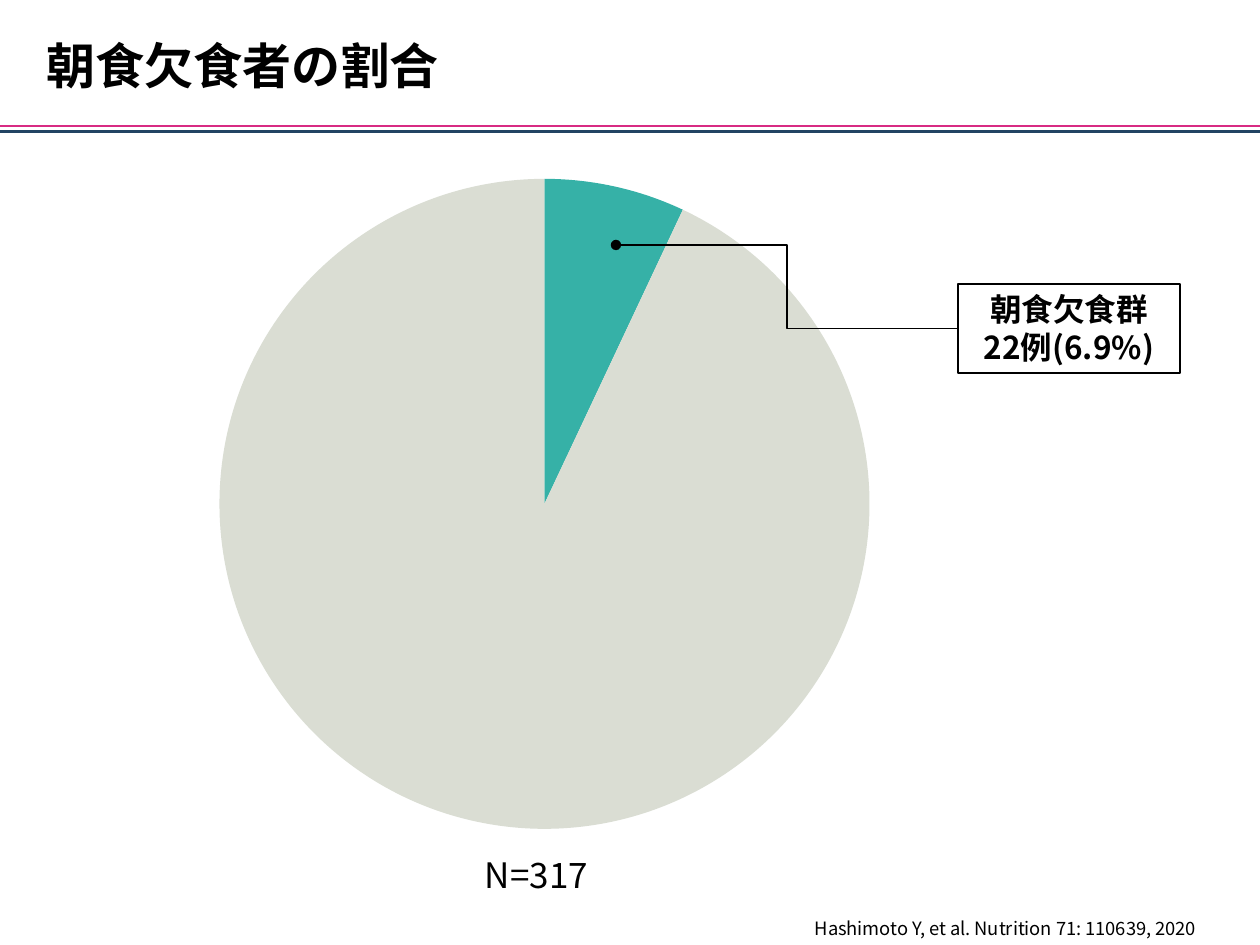
from pptx import Presentation
from pptx.chart.data import CategoryChartData
from pptx.dml.color import RGBColor
from pptx.enum.chart import XL_CHART_TYPE as ChartType
from pptx.enum.shapes import MSO_CONNECTOR as Conn, MSO_SHAPE as Shape
from pptx.enum.text import MSO_ANCHOR as Anchor, MSO_AUTO_SIZE as AutoSize, PP_ALIGN as Align
from pptx.oxml import parse_xml
from pptx.oxml.ns import nsdecls, qn
from pptx.util import Pt

FONT = "Noto Sans CJK JP"
COLORS = {"text": "000000", "pink": "D82B83", "navy": "224463",
          "skipped": "36B1A7", "others": "DADDD3"}


def rgb(name):
    return RGBColor.from_string(COLORS[name])


def add_run(p, text, size, bold=False):
    r = p.add_run()
    r.text = text
    r.font.size, r.font.bold, r.font.name = Pt(size), bold, FONT
    r.font.color.rgb = rgb("text")
    latin = r.font._element.find(qn("a:latin"))
    latin.addnext(parse_xml(f'<a:ea {nsdecls("a")} typeface="{FONT}"/>'))


def add_line(s, kind, start, end, color, width):
    line = s.shapes.add_connector(kind, *map(Pt, start + end))
    line.line.color.rgb = rgb(color)
    line.line.width = Pt(width)
    line._element.spPr.append(parse_xml(f'<a:effectLst {nsdecls("a")}/>'))
    return line


def add_header(s, x, y, w, h, rule_w):
    """Title with the double rule beneath it."""
    title = s.shapes.title
    title.left, title.top, title.width, title.height = map(Pt, (x, y, w, h))
    tf = title.text_frame
    tf.auto_size, tf.vertical_anchor = AutoSize.NONE, Anchor.TOP
    tf.paragraphs[0].alignment = Align.LEFT
    add_run(tf.paragraphs[0], "朝食欠食者の割合", 28, bold=True)
    for rule_y, color in ((75, "navy"), (72, "pink")):
        add_line(s, Conn.STRAIGHT, (0, rule_y), (rule_w, rule_y), color, 1.5)


def add_pie(s, x, y, w, h):
    data = CategoryChartData()
    data.categories = ["1", "2"]
    data.add_series("Series 1", (7, 93))
    chart = s.shapes.add_chart(ChartType.PIE, *map(Pt, (x, y, w, h)), data).chart
    chart.has_legend = chart.has_title = False
    chart.font.name, chart.font.size = "Calibri", Pt(10)
    chart.font.color.rgb = rgb("text")
    plot = chart.plots[0]
    plot.vary_by_categories = True
    for i, color in enumerate(("skipped", "others")):
        fmt = plot.series[0].points[i].format
        fmt.fill.solid()
        fmt.fill.fore_color.rgb = rgb(color)
        fmt.line.fill.background()
    area = chart._chartSpace.chart.plotArea
    for old in area.findall(qn("c:layout")):
        area.remove(old)
    area.insert(0, parse_xml(
        f'<c:layout {nsdecls("c")}><c:manualLayout><c:layoutTarget val="inner"/>'
        '<c:xMode val="edge"/><c:yMode val="edge"/><c:x val="0.093"/><c:y val="0"/>'
        '<c:w val="0.844"/><c:h val="1"/></c:manualLayout></c:layout>'))


def add_callout(s, x, y, w, h, target):
    """Outlined label joined to the target point by a dotted-end elbow."""
    box = s.shapes.add_shape(Shape.RECTANGLE, *map(Pt, (x, y, w, h)))
    box.shadow.inherit = False
    box.fill.background()
    box.line.color.rgb, box.line.width = rgb("text"), Pt(1)
    tf = box.text_frame
    tf.word_wrap = True
    tf.vertical_anchor = Anchor.TOP
    tf.margin_left = tf.margin_right = Pt(4.3)
    tf.margin_top = tf.margin_bottom = Pt(3.6)
    for i, text in enumerate(("朝食欠食群", "22例(6.9%)")):
        p = tf.add_paragraph() if i else tf.paragraphs[0]
        p.alignment = Align.CENTER
        add_run(p, text, 18, bold=True)
    elbow = add_line(s, Conn.ELBOW, (x, y + h / 2), target, "text", 1)
    elbow.line._get_or_add_ln().append(
        parse_xml(f'<a:tailEnd {nsdecls("a")} type="oval"/>'))


def add_note(s, x, y, w, h, text, size, anchor=Anchor.TOP, wrap=True):
    tf = s.shapes.add_textbox(*map(Pt, (x, y, w, h))).text_frame
    tf.word_wrap, tf.vertical_anchor = wrap, anchor
    add_run(tf.paragraphs[0], text, size)


def main():
    prs = Presentation()
    prs.slide_width, prs.slide_height = Pt(720), Pt(540)
    s = prs.slides.add_slide(prs.slide_layouts[5])
    add_header(s, 19.5, 16.5, 257, 41, rule_w=720)
    add_note(s, 458.5, 520, 261.5, 20,
             "Hashimoto Y, et al. Nutrition 71: 110639, 2020", 10.5, Anchor.BOTTOM)
    add_pie(s, 71.3, 102.2, 465.8, 371.5)
    add_note(s, 270, 484, 83.5, 31.5, "N=317", 20, wrap=False)
    add_callout(s, 547.4, 162.2, 126.8, 51, target=(352, 140))
    prs.save("out.pptx")


if __name__ == "__main__":
    main()
